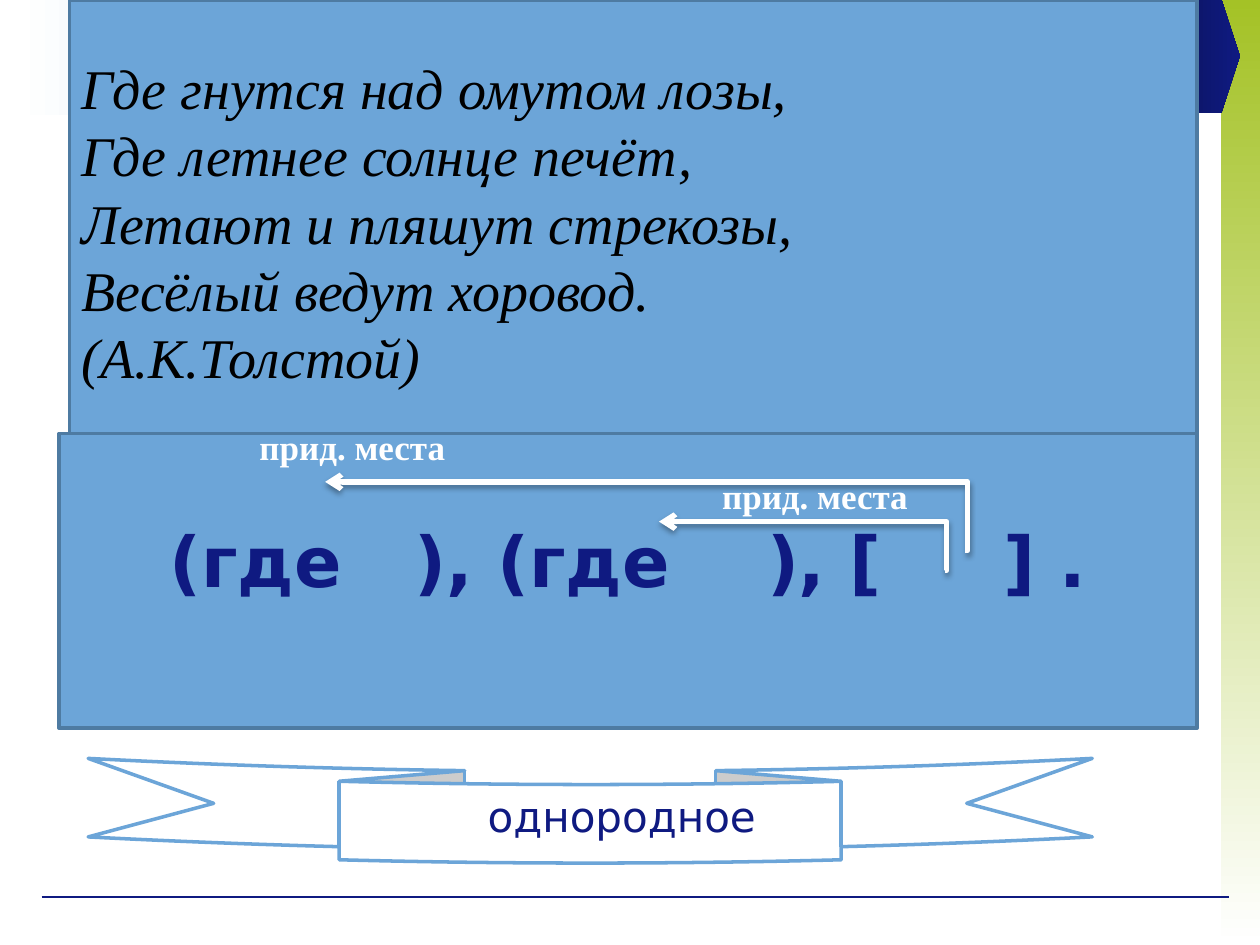
from lxml import etree
from pptx import Presentation
from pptx.dml.color import RGBColor
from pptx.enum.shapes import MSO_CONNECTOR, MSO_SHAPE
from pptx.enum.text import MSO_ANCHOR, PP_ALIGN
from pptx.oxml.ns import qn
from pptx.util import Pt

RECT, PLATE, RIBBON = MSO_SHAPE.RECTANGLE, MSO_SHAPE.PENTAGON, MSO_SHAPE.CURVED_DOWN_RIBBON
STRAIGHT, ELBOW = MSO_CONNECTOR.STRAIGHT, MSO_CONNECTOR.ELBOW
TOP, MIDDLE = MSO_ANCHOR.TOP, MSO_ANCHOR.MIDDLE
LEFT, CENTER = PP_ALIGN.LEFT, PP_ALIGN.CENTER
SERIF, SANS = "Times New Roman", "DejaVu Sans"

COLORS = {
    "white": "FFFFFF", "black": "000000", "navy": "0F1A81", "deep navy": "0B135C",
    "blue": "6CA5D8", "edge": "4E7BA2", "lime": "A4C226",
}

POEM = [
    "Где гнутся над омутом лозы,",
    "Где летнее солнце печёт,",
    "Летают и пляшут стрекозы,",
    "Весёлый ведут хоровод.",
    "(А.К.Толстой)",
]
SCHEME = "(где   ), (где    ), [     ] ."
VERDICT = "однородное"
CLAUSE_LABEL = "прид. места"

# shape, box (left, top, width, height), gradient colours, angle
DECORATIONS = [
    (RECT, (697.7, 0, 22.3, 540), ("lime", "white"), 270),
    (PLATE, (666, -0.7, 42.5, 65.5), ("deep navy", "navy"), 0),
    (RECT, (8.6, 0, 626.4, 65.5), ("white", "blue"), 0),
]
FOOTER_RULE = (23.8, 512.6, 702, 512.6)
POEM_BOX = (39.6, 0, 644.4, 253.4)
SCHEME_BOX = (33.8, 247.7, 650.2, 168.5)
RIBBON_BOX = (50.4, 433.4, 573.8, 59.8)
LABEL_BOXES = [(141.2, 239.8, 121.4, 32), (405.6, 267.8, 185.5, 32)]
# start at the main clause, end at the subordinate one; bend offset in 1/100000
ARROWS = [
    ((540, 326.2, 376.6, 298.1), -600),
    ((551.5, 314.6, 185.8, 275.4), -400),
]


def color(name):
    return RGBColor.from_string(COLORS[name])


def add_panel(shapes, kind, box, fill=None, edge=None, edge_width=2):
    panel = shapes.add_shape(kind, *map(Pt, box))
    panel.shadow.inherit = False
    if fill:
        panel.fill.solid()
        panel.fill.fore_color.rgb = color(fill)
    if edge:
        panel.line.color.rgb = color(edge)
        panel.line.width = Pt(edge_width)
    else:
        panel.line.fill.background()
    return panel


def write(shape, text, font, size, ink, align=LEFT, anchor=TOP, bold=False, italic=False):
    frame = shape.text_frame
    frame.word_wrap = True
    frame.vertical_anchor = anchor
    frame.text = text
    paragraph = frame.paragraphs[0]
    paragraph.alignment = align
    paragraph.font.name = font
    paragraph.font.size = Pt(size)
    paragraph.font.bold = bold
    paragraph.font.italic = italic
    paragraph.font.color.rgb = color(ink)
    return frame


def add_line(shapes, kind, ends, ink, width):
    """Add a connector and return it with its empty effect list."""
    line = shapes.add_connector(kind, *map(Pt, ends))
    line.line.color.rgb = color(ink)
    line.line.width = Pt(width)
    effects = etree.SubElement(line._element.spPr, qn("a:effectLst"))
    return line, effects


def add_arrow(shapes, ends, bend):
    arrow, effects = add_line(shapes, ELBOW, ends, "white", 3)
    properties = arrow._element.spPr
    adjustments = properties.find(qn("a:prstGeom")).get_or_add_avLst()
    etree.SubElement(adjustments, qn("a:gd"), name="adj1", fmla=f"val {bend}")
    etree.SubElement(properties.find(qn("a:ln")), qn("a:tailEnd"), type="arrow")
    shadow = etree.SubElement(
        effects, qn("a:outerShdw"), blurRad=str(Pt(3.1)), dist=str(Pt(1.8)),
        dir="5400000", rotWithShape="0")
    tint = etree.SubElement(shadow, qn("a:srgbClr"), val=COLORS["black"])
    etree.SubElement(tint, qn("a:alpha"), val="35000")


def main():
    deck = Presentation()
    deck.slide_width, deck.slide_height = Pt(720), Pt(540)
    shapes = deck.slides.add_slide(deck.slide_layouts[6]).shapes

    for kind, box, stops, angle in DECORATIONS:
        decoration = add_panel(shapes, kind, box)
        decoration.fill.gradient()
        decoration.fill.gradient_angle = angle
        for stop, name in zip(decoration.fill.gradient_stops, stops):
            stop.color.rgb = color(name)
        if kind == PLATE:
            decoration.adjustments[0] = 0.25
    add_line(shapes, STRAIGHT, FOOTER_RULE, "navy", 0.75)

    poem = add_panel(shapes, RECT, POEM_BOX, "blue", "edge")
    verse = write(poem, "\v".join(POEM), SERIF, 32, "black", anchor=MIDDLE, italic=True)
    verse.paragraphs[0].line_spacing = Pt(38.4)

    scheme = add_panel(shapes, RECT, SCHEME_BOX, "blue", "edge")
    write(scheme, SCHEME, SANS, 40, "navy", CENTER, bold=True).margin_top = Pt(48)

    for ends, bend in ARROWS:
        add_arrow(shapes, ends, bend)

    ribbon = add_panel(shapes, RIBBON, RIBBON_BOX, "white", "blue")
    write(ribbon, VERDICT, SANS, 24, "navy", CENTER).margin_left = Pt(43.2)

    for box in LABEL_BOXES:
        label = shapes.add_textbox(*map(Pt, box))
        write(label, CLAUSE_LABEL, SERIF, 20, "white", bold=True)

    deck.save("out.pptx")


if __name__ == "__main__":
    main()
